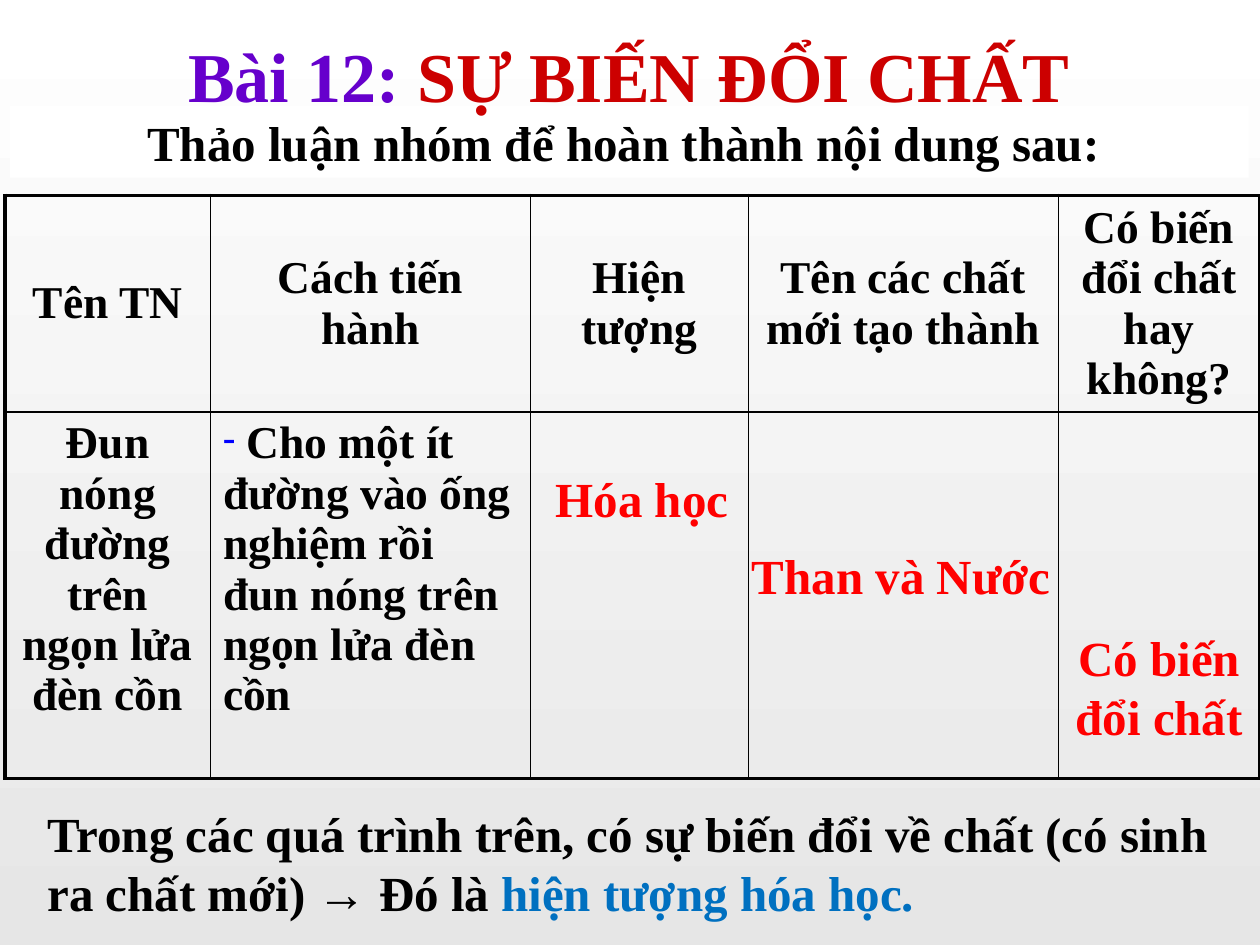
from pptx import Presentation
from pptx.dml.color import RGBColor
from pptx.enum.shapes import MSO_SHAPE
from pptx.enum.text import MSO_ANCHOR, PP_ALIGN
from pptx.oxml import parse_xml
from pptx.oxml.ns import nsdecls
from pptx.util import Inches, Pt

RECTANGLE = MSO_SHAPE.RECTANGLE
LEFT, CENTER = PP_ALIGN.LEFT, PP_ALIGN.CENTER
TOP, MIDDLE = MSO_ANCHOR.TOP, MSO_ANCHOR.MIDDLE
BLACK = RGBColor(0x00, 0x00, 0x00)
WHITE = RGBColor(0xFF, 0xFF, 0xFF)
GRAY = RGBColor(0xE6, 0xE6, 0xE6)
RED = RGBColor(0xFF, 0x00, 0x00)
DARK_RED = RGBColor(0xCC, 0x00, 0x00)
PURPLE = RGBColor(0x66, 0x00, 0xCC)
BLUE = RGBColor(0x00, 0x70, 0xC0)
FONT = "Times New Roman"


def write(frame, runs, size, align, anchor=TOP):
    frame.word_wrap = True
    frame.vertical_anchor = anchor
    para = frame.paragraphs[0]
    para.alignment = align
    for text, color in runs:
        span = para.add_run()
        span.text = text
        span.font.name = FONT
        span.font.size = Pt(size)
        span.font.bold = True
        span.font.color.rgb = color
    return para


def add_border(cell, side, width):
    cell._tc.get_or_add_tcPr().append(parse_xml(
        f'<a:ln{side} {nsdecls("a")} w="{Pt(width)}"><a:solidFill>'
        f'<a:srgbClr val="{BLACK}"/></a:solidFill></a:ln{side}>'))


deck = Presentation()
deck.slide_width, deck.slide_height = Inches(10), Inches(7.5)
page = deck.slides.add_slide(deck.slide_layouts[5])

backdrop = page.background.fill
backdrop.gradient()
backdrop.gradient_angle = 270
for stop, color in zip(backdrop.gradient_stops, (WHITE, GRAY)):
    stop.color.rgb = color

task = page.shapes.add_shape(RECTANGLE, Inches(0.08), Inches(0.84), Inches(9.83), Inches(0.57))
task.shadow.inherit = False
task.fill.solid()
task.fill.fore_color.rgb = WHITE
task.line.fill.background()
write(task.text_frame, [("Thảo luận nhóm để hoàn thành nội dung sau: ", BLACK)], 28, CENTER)

widths = [1.63, 2.54, 1.73, 2.46, 1.6]
heights = [1.72, 2.91]
rows = [
    ["Tên TN", "Cách tiến hành", "Hiện tượng", "Tên các chất mới tạo thành ",
     "Có biến đổi chất hay không?"],
    ["Đun nóng đường trên ngọn lửa đèn cồn",
     " Cho một ít đường vào ống nghiệm rồi đun nóng trên ngọn lửa đèn cồn", "", "", ""],
]
table = page.shapes.add_table(len(heights), len(widths), Inches(0.04), Inches(1.55),
                              Inches(sum(widths)), Inches(sum(heights))).table
table.first_row = table.horz_banding = False
for column, width in zip(table.columns, widths):
    column.width = Inches(width)
for row, height in zip(table.rows, heights):
    row.height = Inches(height)

last_row, last_column = len(heights) - 1, len(widths) - 1
for r, texts in enumerate(rows):
    for c, text in enumerate(texts):
        cell = table.cell(r, c)
        outer_sides = {"L": c == 0, "R": c == last_column, "T": r == 0, "B": r == last_row}
        for side, outer in outer_sides.items():
            add_border(cell, side, 2.25 if outer else 1)
        cell.fill.background()
        cell.vertical_anchor = MIDDLE if r == 0 else TOP
        if text:
            write(cell.text_frame, [(text, BLACK)], 26, CENTER)

method = table.cell(1, 1).text_frame.paragraphs[0]
method.alignment = LEFT
for bullet in ('buClr {}><a:srgbClr val="0000FF"/></a:buClr>', 'buSzPct {} val="80000"/>',
               'buChar {} char="-"/>'):
    method._p.get_or_add_pPr().append(parse_xml("<a:" + bullet.format(nsdecls("a"))))

notes = [
    (4.24, 3.67, 1.71, 0.57, CENTER, [("Hóa học", RED)]),
    (5.87, 4.28, 2.6, 0.57, LEFT, [("Than và Nước", RED)]),
    (8.4, 4.93, 1.6, 1.04, CENTER, [("Có biến đổi chất", RED)]),
    (0.28, 6.33, 9.53, 1.04, LEFT, [
        ("Trong các quá trình trên, có sự biến đổi về chất (có sinh ra chất mới) → Đó là ", BLACK),
        ("hiện tượng hóa học.", BLUE)]),
]
for left, top, width, height, align, runs in notes:
    box = page.shapes.add_textbox(Inches(left), Inches(top), Inches(width), Inches(height))
    write(box.text_frame, runs, 28, align)

title = page.shapes.title
title.left, title.top = Inches(0.49), Inches(-0.03)
title.width, title.height = Inches(9), Inches(1.25)
write(title.text_frame, [("Bài 12: ", PURPLE), ("SỰ BIẾN ĐỔI CHẤT", DARK_RED)], 40, CENTER, MIDDLE)
page.shapes._spTree.append(title._element)

deck.save("out.pptx")
